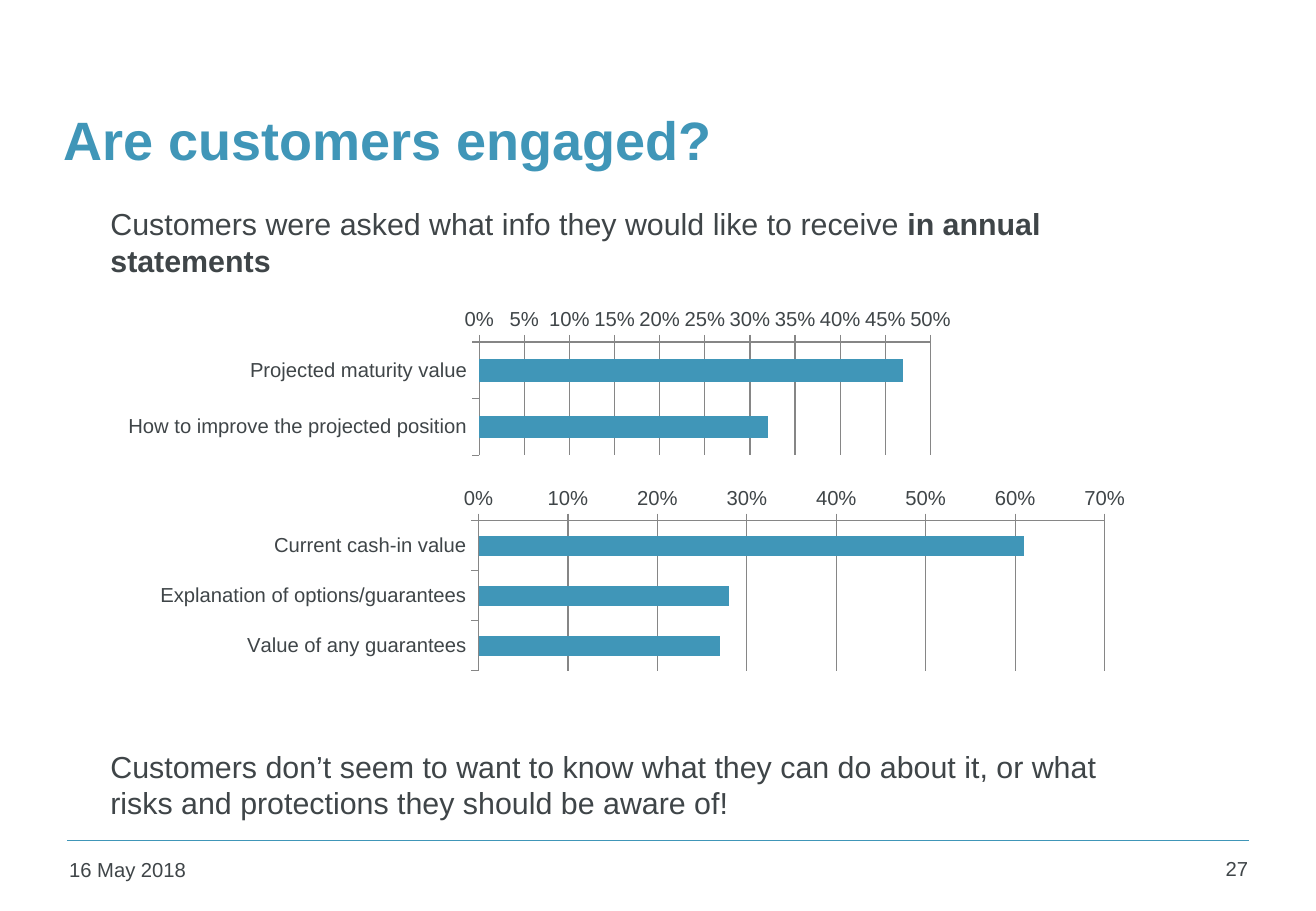
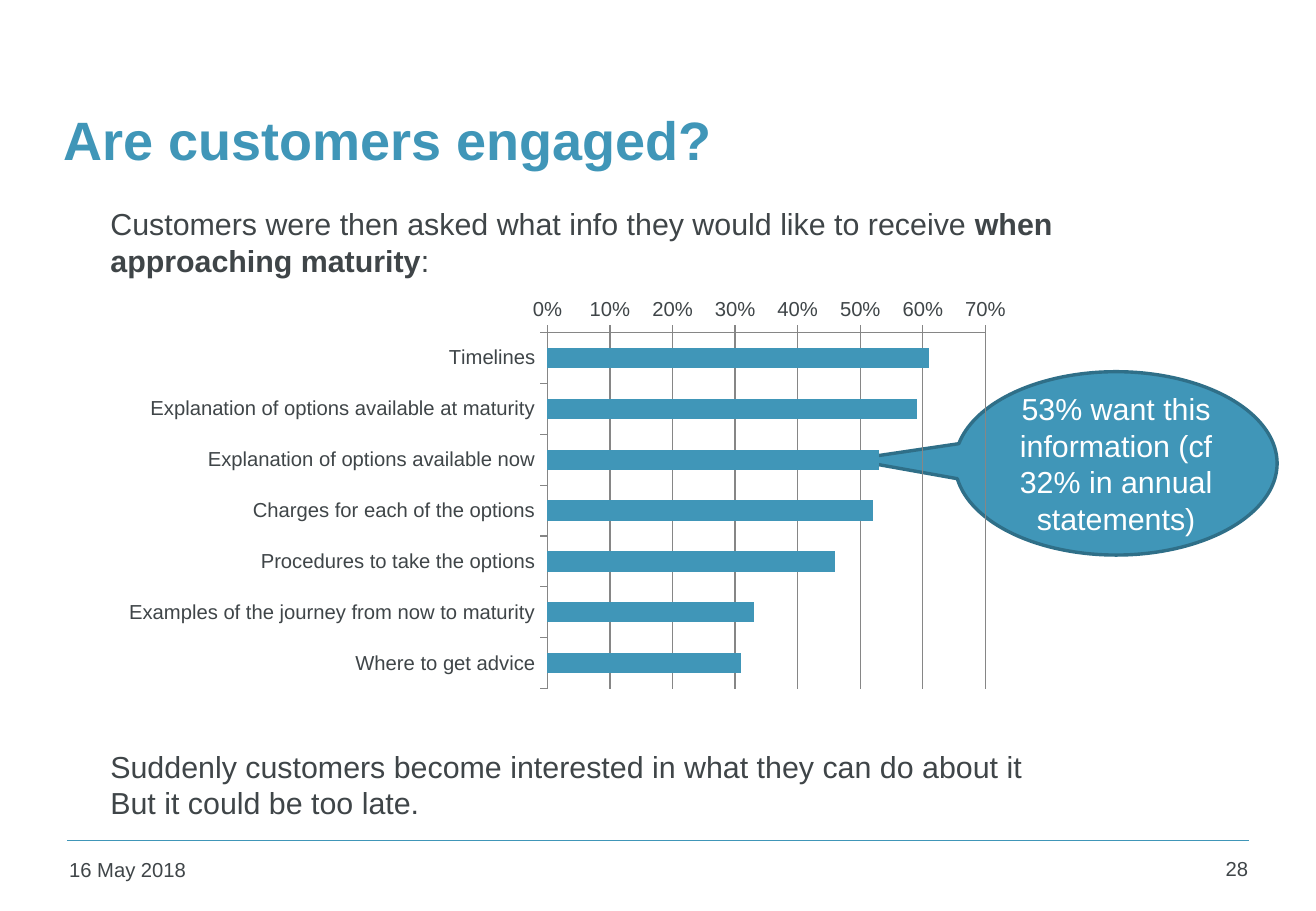
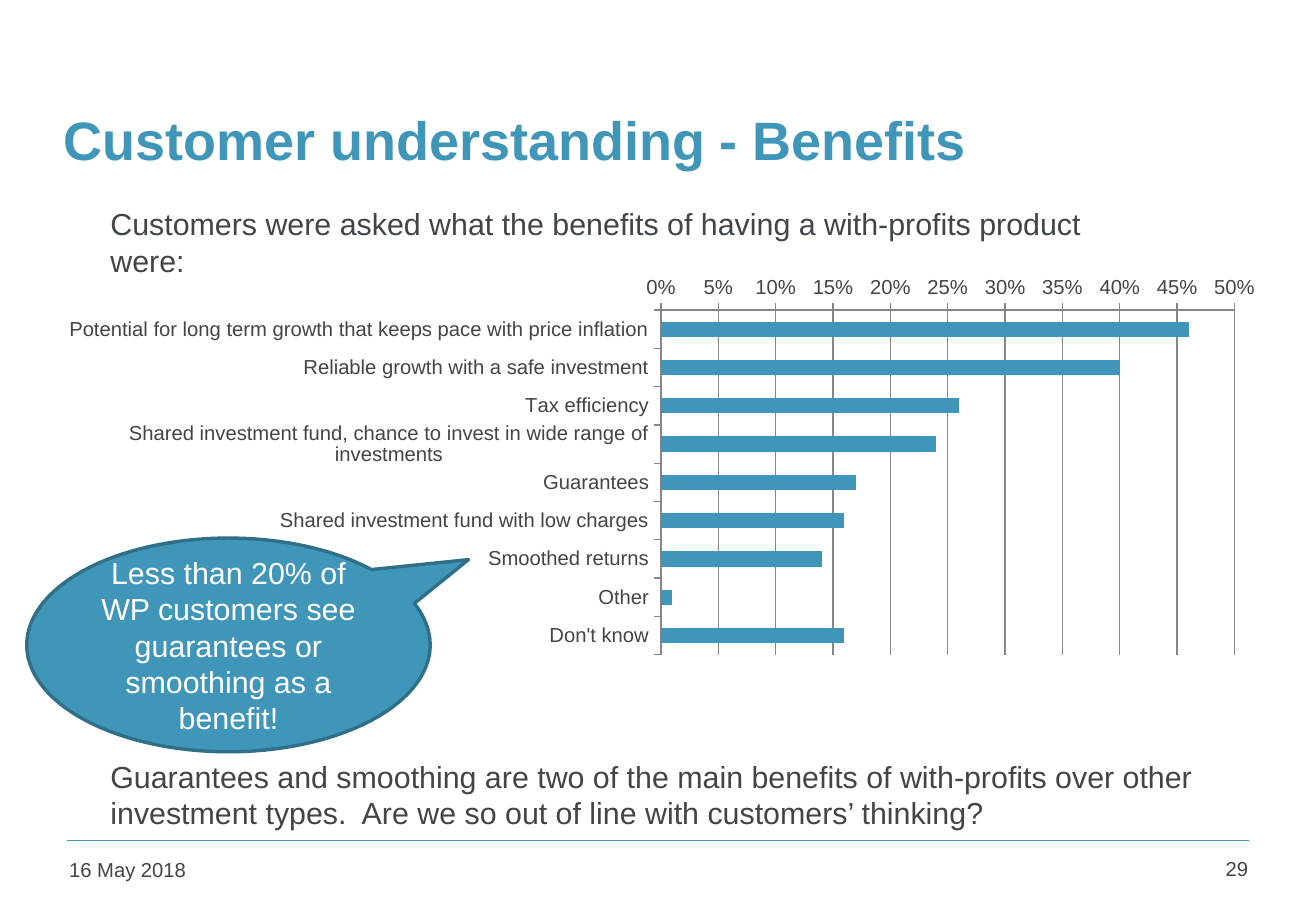
import pptx
import pptx.chart.data
import pptx.dml.color
import pptx.enum.chart
import pptx.enum.shapes
import pptx.enum.text
import pptx.oxml
import pptx.oxml.ns
import pptx.util

Inches = pptx.util.Inches
Pt = pptx.util.Pt
ALIGN = pptx.enum.text.PP_ALIGN
SHAPE = pptx.enum.shapes.MSO_SHAPE

FONT = "Arial"
BLUE = "4096B8"
EDGE = "2F6F88"
INK = "3F4548"
GREY = "868686"
WHITE = "FFFFFF"
DATE = "16 May 2018"
FIRST = 27

HEAD = (0.42, 0.92, 9.22, 0.45)
INTRO = (0.81, 1.64, 8.38, 0.71)
CLOSE = (0.81, 6.11, 8.38, 0.71)
FOOT = (0.47, 6.92, 9.9, 0.45)


def rgb(code):
    """Turn a hex string into a colour."""
    return pptx.dml.color.RGBColor.from_string(code)


def span(box):
    """Turn a box in inches into lengths."""
    return [Inches(side) for side in box]


def style(font, size, code, bold=None):
    """Set the shared font with a size and colour."""
    font.name = FONT
    font.size = Pt(size)
    font.bold = bold
    font.color.rgb = rgb(code)


def write(frame, paras, size, code, align=ALIGN.LEFT):
    """Fill a frame with paragraphs of plain and *bold* parts."""
    frame.word_wrap = True
    for count, text in enumerate(paras):
        para = frame.add_paragraph() if count else frame.paragraphs[0]
        para.alignment = align
        style(para.font, size, code)
        for turn, part in enumerate(text.split("*")):
            if part:
                run = para.add_run()
                run.text = part
                if turn % 2:
                    run.font.bold = True


def note(slide, box, paras, size=18, align=ALIGN.LEFT):
    """Add a text box."""
    shape = slide.shapes.add_textbox(*span(box))
    write(shape.text_frame, paras, size, INK, align)


def title(slide, box, text):
    """Place and style the slide title."""
    head = slide.shapes.title
    head.left, head.top, head.width, head.height = span(box)
    frame = head.text_frame
    frame.text = text
    frame.word_wrap = True
    frame.auto_size = pptx.enum.text.MSO_AUTO_SIZE.NONE
    frame.vertical_anchor = pptx.enum.text.MSO_ANCHOR.MIDDLE
    para = frame.paragraphs[0]
    para.alignment = ALIGN.LEFT
    style(para.font, 32, BLUE, True)


def footer(slide, box, number):
    """Add the rule, date and page number."""
    left, top, width, height = box
    rule = slide.shapes.add_connector(
        pptx.enum.shapes.MSO_CONNECTOR.STRAIGHT,
        *span((left + 0.08, top, left + width - 0.09, top)))
    rule.line.color.rgb = rgb(BLUE)
    rule.line.width = Pt(1)
    rule._element.spPr.append(
        pptx.oxml.parse_xml("<a:effectLst %s/>" % pptx.oxml.ns.nsdecls("a")))
    note(slide, (left, top + 0.09, 2.39, height - 0.09), [DATE], 12)
    note(slide, (left + width - 0.77, top + 0.08, 0.77, height - 0.08),
         [str(number)], 12, ALIGN.RIGHT)


def frame_plot(chart, plot):
    """Fix the inner plot area and clear the chart background."""
    names = pptx.oxml.ns.nsdecls("c", "a")
    sides = "".join('<c:%s val="%s"/>' % pair for pair in zip("xywh", plot))
    area = chart._chartSpace.chart.plotArea
    for old in area.findall(pptx.oxml.ns.qn("c:layout")):
        area.remove(old)
    area.insert(0, pptx.oxml.parse_xml(
        '<c:layout %s><c:manualLayout><c:layoutTarget val="inner"/>'
        '<c:xMode val="edge"/><c:yMode val="edge"/>%s'
        '</c:manualLayout></c:layout>' % (names, sides)))
    chart._chartSpace.chart.addnext(pptx.oxml.parse_xml(
        "<c:spPr %s><a:noFill/><a:ln><a:noFill/></a:ln></c:spPr>" % names))


def bars(slide, box, plot, top, step, rows):
    """Add a bar chart that reads from the top down."""
    data = pptx.chart.data.CategoryChartData(number_format="0%")
    data.categories = [name for name, share in rows]
    data.add_series("Series 1", [share / 100 for name, share in rows])
    chart = slide.shapes.add_chart(
        pptx.enum.chart.XL_CHART_TYPE.BAR_CLUSTERED, *span(box), data).chart
    chart.has_title = False
    chart.has_legend = False
    style(chart.font, 12, INK)
    body = chart.plots[0]
    body.gap_width = 150
    body.vary_by_categories = False
    fill = body.series[0].format.fill
    fill.solid()
    fill.fore_color.rgb = rgb(BLUE)
    cats, vals = chart.category_axis, chart.value_axis
    cats.reverse_order = True
    vals.minimum_scale = 0
    vals.maximum_scale = top
    vals.major_unit = step
    vals.has_major_gridlines = True
    vals.tick_labels.number_format = "0%"
    vals.tick_labels.number_format_is_linked = False
    for axis in (cats, vals):
        axis.major_tick_mark = pptx.enum.chart.XL_TICK_MARK.OUTSIDE
    for part in (cats, vals, vals.major_gridlines):
        part.format.line.color.rgb = rgb(GREY)
        part.format.line.width = Pt(0.75)
    frame_plot(chart, plot)


def bubble(slide, box, tip, text):
    """Add an oval callout whose tip is relative to its box."""
    shape = slide.shapes.add_shape(SHAPE.OVAL_CALLOUT, *span(box))
    shape.shadow.inherit = False
    for spot, share in enumerate(tip):
        shape.adjustments[spot] = share
    shape.fill.solid()
    shape.fill.fore_color.rgb = rgb(BLUE)
    shape.line.color.rgb = rgb(EDGE)
    shape.line.width = Pt(2)
    shape.text_frame.vertical_anchor = pptx.enum.text.MSO_ANCHOR.MIDDLE
    write(shape.text_frame, [text], 18, WHITE, ALIGN.CENTER)


def page(deck, number, head, intro, close, box=CLOSE):
    """Start a slide with its title, opening, closing and footer."""
    slide = deck.slides.add_slide(deck.slide_layouts[5])
    title(slide, HEAD, head)
    note(slide, INTRO, [intro])
    note(slide, box, close)
    footer(slide, FOOT, number)
    return slide


def yearly(deck, number):
    """Build the slide on annual statements."""
    slide = page(
        deck, number, "Are customers engaged?",
        "Customers were asked what info they would like to receive "
        "*in annual statements*",
        ["Customers don’t seem to want to know what they can do about it, "
         "or what risks and protections they should be aware of!"])
    bars(slide, (0.78, 2.47, 7.24, 1.44), (0.437, 0.24, 0.513, 0.648),
         0.5, 0.05, [
             ("Projected maturity value", 47),
             ("How to improve the projected position", 32)])
    bars(slide, (1.16, 3.99, 8.27, 1.57), (0.336, 0.19, 0.623, 0.785),
         0.7, 0.1, [
             ("Current cash-in value", 61),
             ("Explanation of options/guarantees", 28),
             ("Value of any guarantees", 27)])


def mature(deck, number):
    """Build the slide on approaching maturity."""
    slide = page(
        deck, number, "Are customers engaged?",
        "Customers were then asked what info they would like to receive "
        "*when approaching maturity*:",
        ["Suddenly customers become interested in what they can do about it",
         "But it could be too late."])
    bubble(slide, (7.86, 3.06, 2.65, 1.51), (-0.824, -0.02),
           "53% want this information (cf 32% in annual statements)")
    bars(slide, (0.93, 2.33, 7.48, 3.52), (0.478, 0.116, 0.482, 0.833),
         0.7, 0.1, [
             ("Timelines", 61),
             ("Explanation of options available at maturity", 59),
             ("Explanation of options available now", 53),
             ("Charges for each of the options", 52),
             ("Procedures to take the options", 46),
             ("Examples of the journey from now to maturity", 33),
             ("Where to get advice", 31)])


def gains(deck, number):
    """Build the slide on benefits."""
    slide = page(
        deck, number, "Customer understanding - Benefits",
        "Customers were asked what the benefits of having a with-profits "
        "product were:",
        ["Guarantees and smoothing are two of the main benefits of "
         "with-profits over other investment types.  Are we so out of line "
         "with customers’ thinking?"],
        (0.81, 6.19, 9.22, 0.71))
    bars(slide, (0.46, 2.17, 10, 3.39), (0.498, 0.113, 0.472, 0.837),
         0.5, 0.05, [
             ("Potential for long term growth that keeps pace with "
              "price inflation", 46),
             ("Reliable growth with a safe investment", 40),
             ("Tax efficiency", 26),
             ("Shared investment fund, chance to invest in wide range of "
              "investments", 24),
             ("Guarantees", 17),
             ("Shared investment fund with low charges", 16),
             ("Smoothed returns", 14),
             ("Other", 1),
             ("Don't know", 16)])
    bubble(slide, (0.22, 4.43, 3.32, 1.76), (0.595, -0.399),
           "Less than 20% of WP customers see guarantees or smoothing "
           "as a benefit!")


def main():
    """Build and save the deck."""
    deck = pptx.Presentation()
    deck.slide_width = Inches(10.83)
    deck.slide_height = Inches(7.5)
    for number, build in enumerate((yearly, mature, gains), FIRST):
        build(deck, number)
    deck.save("out.pptx")


if __name__ == "__main__":
    main()
